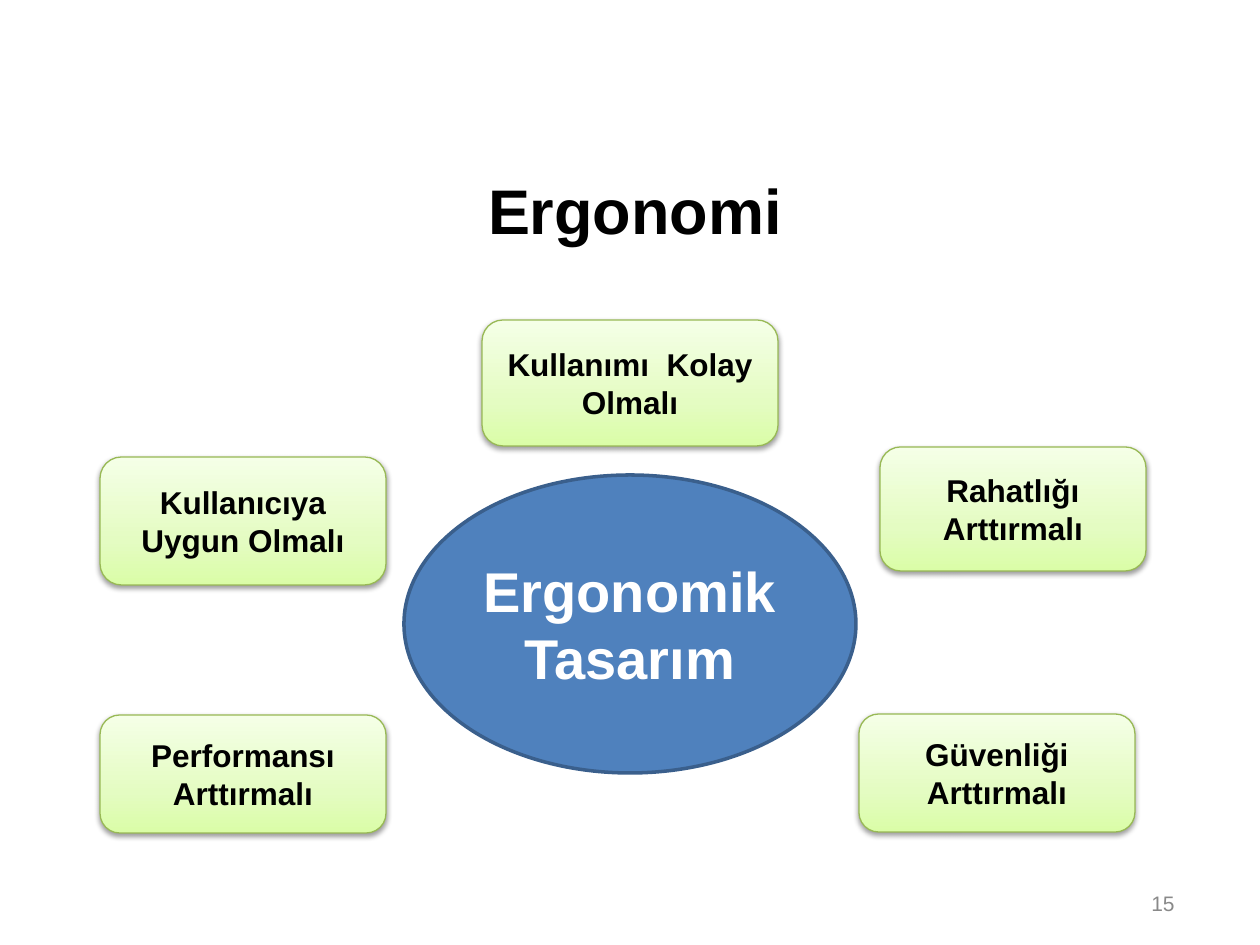
from typing import NamedTuple

from pptx import Presentation
from pptx.dml.color import RGBColor
from pptx.enum.shapes import MSO_SHAPE
from pptx.enum.text import MSO_ANCHOR, PP_ALIGN
from pptx.oxml import parse_xml
from pptx.oxml.ns import nsdecls
from pptx.util import Emu, Pt

EMU_PER_PX = 914400 / 126
STOPS = ((0, "DAFDA7"), (35, "E4FCC2"), (100, "F5FFE7"))


class Box(NamedTuple):
    x: int
    y: int
    w: int
    h: int


class Requirement(NamedTuple):
    text: str
    box: Box


REQUIREMENTS = (
    Requirement("Kullanıcıya Uygun Olmalı", Box(100, 457, 286, 128)),
    Requirement("Rahatlığı Arttırmalı", Box(880, 447, 266, 124)),
    Requirement("Performansı Arttırmalı", Box(100, 715, 286, 118)),
    Requirement("Güvenliği Arttırmalı", Box(859, 714, 276, 118)),
    Requirement("Kullanımı  Kolay Olmalı", Box(482, 320, 296, 126)),
)


def px(n: int) -> Emu:
    return Emu(round(n * EMU_PER_PX))


def rgb(color: str) -> RGBColor:
    return RGBColor.from_string(color)


def place(sp, box: Box) -> None:
    sp.left, sp.top, sp.width, sp.height = map(px, box)


def write(sp, text: str, size: int, color: str, bold: bool = True,
          align=PP_ALIGN.CENTER, anchor=MSO_ANCHOR.MIDDLE) -> None:
    tf = sp.text_frame
    tf.word_wrap = True
    tf.vertical_anchor = anchor
    p = tf.paragraphs[0]
    p.text = text
    p.alignment = align
    p.font.name = "Arial"
    p.font.size = Pt(size)
    p.font.bold = bold
    p.font.color.rgb = rgb(color)


def add_gradient(sp) -> None:
    stops = "".join(
        f'<a:gs pos="{pos * 1000}"><a:srgbClr val="{color}"/></a:gs>'
        for pos, color in STOPS
    )
    sp._element.spPr.append(parse_xml(
        f'<a:gradFill {nsdecls("a")} rotWithShape="1"><a:gsLst>{stops}</a:gsLst>'
        '<a:lin ang="16200000" scaled="0"/></a:gradFill>'
    ))


def add_shadow(sp) -> None:
    sp._element.spPr.append(parse_xml(
        f'<a:effectLst {nsdecls("a")}><a:outerShdw blurRad="{Pt(3.1)}" '
        f'dist="{Pt(1.6)}" dir="5400000" rotWithShape="0">'
        '<a:srgbClr val="000000"><a:alpha val="38000"/></a:srgbClr>'
        '</a:outerShdw></a:effectLst>'
    ))


def add_outline(sp, color: str, width: float) -> None:
    sp.line.color.rgb = rgb(color)
    sp.line.width = Pt(width)


def add_requirement(s, item: Requirement) -> None:
    sp = s.shapes.add_shape(
        MSO_SHAPE.FLOWCHART_ALTERNATE_PROCESS, *map(px, item.box))
    add_gradient(sp)
    add_outline(sp, "98B955", 0.75)
    add_shadow(sp)
    write(sp, item.text, 18, "000000")


def add_core(s, text: str, box: Box) -> None:
    sp = s.shapes.add_shape(MSO_SHAPE.OVAL, *map(px, box))
    sp.shadow.inherit = False
    sp.fill.solid()
    sp.fill.fore_color.rgb = rgb("4F81BD")
    add_outline(sp, "3A5F8C", 2)
    write(sp, text, 32, "FFFFFF")


def main() -> None:
    prs = Presentation()
    prs.slide_width, prs.slide_height = px(1260), px(945)
    s = prs.slides.add_slide(prs.slide_layouts[5])

    title = s.shapes.title
    place(title, Box(94, 165, 1082, 89))
    write(title, "Ergonomi", 36, "000000", anchor=MSO_ANCHOR.TOP)

    for item in REQUIREMENTS:
        add_requirement(s, item)
    add_core(s, "Ergonomik Tasarım", Box(404, 475, 452, 298))

    number = s.shapes.add_textbox(*map(px, Box(893, 878, 294, 50)))
    write(number, "15", 12, "898989", bold=False, align=PP_ALIGN.RIGHT)

    prs.save("out.pptx")


if __name__ == "__main__":
    main()
